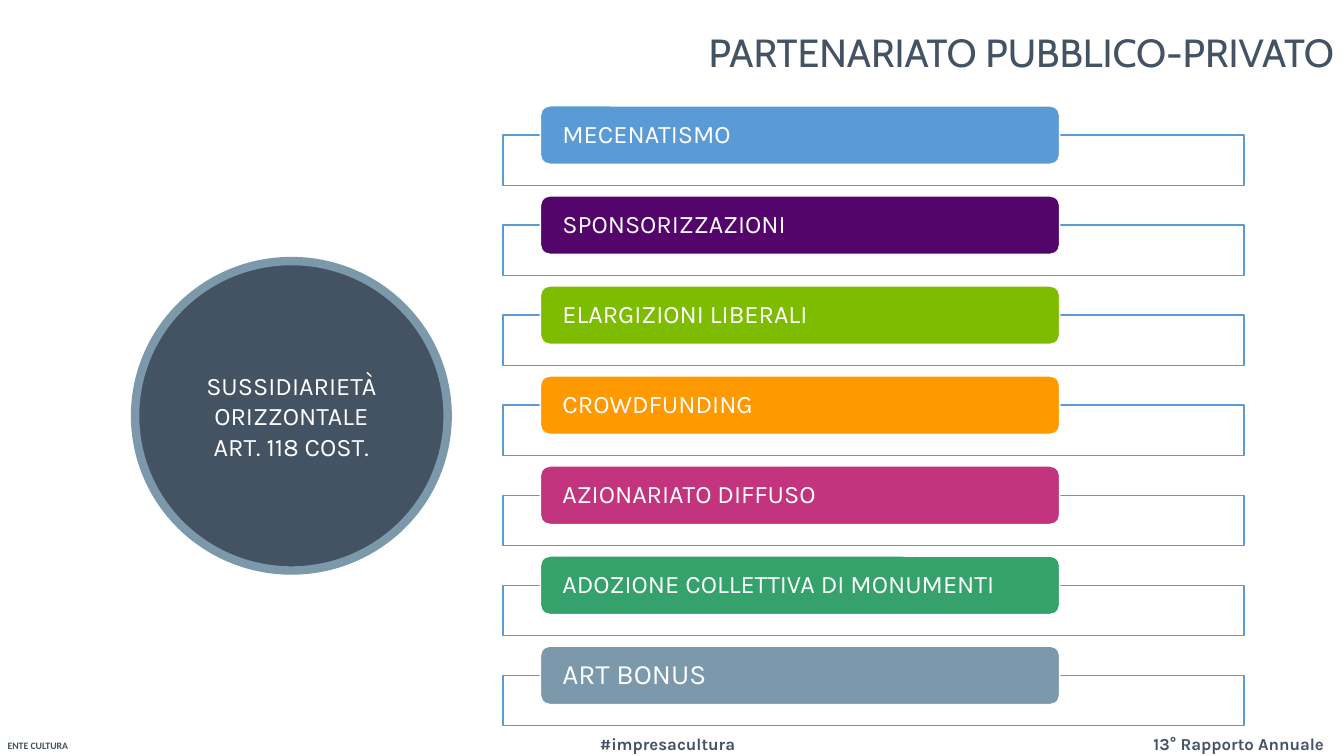
from lxml.etree import SubElement
from pptx import Presentation
from pptx.dml.color import RGBColor
from pptx.enum.shapes import MSO_SHAPE
from pptx.enum.text import MSO_ANCHOR, PP_ALIGN
from pptx.oxml.ns import qn
from pptx.util import Inches, Pt

WHITE = RGBColor(0xFF, 0xFF, 0xFF)
SLATE = RGBColor(0x44, 0x53, 0x64)
STEEL = RGBColor(0x7C, 0x98, 0xAB)
BLUE = RGBColor(0x5B, 0x9B, 0xD5)
PURPLE = RGBColor(0x53, 0x05, 0x6B)
GREEN = RGBColor(0x7D, 0xBC, 0x00)
ORANGE = RGBColor(0xFF, 0x99, 0x00)
PINK = RGBColor(0xC2, 0x34, 0x7E)
EMERALD = RGBColor(0x35, 0xA1, 0x6B)

TITLE = "PARTENARIATO PUBBLICO-PRIVATO"
PRINCIPLE = ["SUSSIDIARIETÀ ORIZZONTALE", "ART. 118 COST."]
TOOLS = [
    ("MECENATISMO", BLUE, 18),
    ("SPONSORIZZAZIONI", PURPLE, 18),
    ("ELARGIZIONI LIBERALI", GREEN, 18),
    ("CROWDFUNDING", ORANGE, 18),
    ("AZIONARIATO DIFFUSO", PINK, 18),
    ("ADOZIONE COLLETTIVA DI MONUMENTI", EMERALD, 18),
    ("ART BONUS", STEEL, 20),
]
FOOTERS = [
    ("ENTE CULTURA", (0, 7.34, 0.75, 0.12), "Calibri", 7, PP_ALIGN.CENTER),
    ("#impresacultura", (5.95, 7.28, 1.43, 0.2), "Karla", 12, PP_ALIGN.LEFT),
    ("13° Rapporto Annuale", (11.44, 7.28, 1.85, 0.2), "Karla", 12, PP_ALIGN.LEFT),
]
FIRST_TOP, LAST_TOP = 1.05, 6.41
PITCH = (LAST_TOP - FIRST_TOP) / (len(TOOLS) - 1)


def set_attrs(obj, values):
    for name, value in values.items():
        setattr(obj, name, value)


def write(tf, lines, font, color, frame=None, para=None):
    set_attrs(tf, {"word_wrap": True, "vertical_anchor": MSO_ANCHOR.MIDDLE, **(frame or {})})
    for i, line in enumerate(lines):
        p = tf.add_paragraph() if i else tf.paragraphs[0]
        set_attrs(p, para or {})
        r = p.add_run()
        r.text = line
        set_attrs(r.font, font)
        r.font.color.rgb = color


def add_box(kind, box, fill, line, width):
    sp = s.shapes.add_shape(kind, *map(Inches, box))
    sp.shadow.inherit = False
    sp.fill.solid()
    sp.fill.fore_color.rgb = fill
    sp.line.color.rgb = line
    sp.line.width = Pt(width)
    return sp


prs = Presentation()
prs.slide_width, prs.slide_height = Inches(13.33), Inches(7.5)
s = prs.slides.add_slide(prs.slide_layouts[5])

title = s.shapes.title
set_attrs(title, dict(zip(("left", "top", "width", "height"), map(Inches, (5.89, 0.16, 7.44, 0.77)))))
write(title.text_frame, [TITLE], {"name": "Cabin", "size": Pt(28)}, SLATE,
      para={"alignment": PP_ALIGN.RIGHT, "line_spacing": 0.9})

for text, box, face, size, align in FOOTERS:
    tb = s.shapes.add_textbox(*map(Inches, box))
    write(tb.text_frame, [text], {"name": face, "size": Pt(size), "bold": True}, SLATE,
          {"word_wrap": False, "margin_left": 0, "margin_right": 0, "margin_top": 0, "margin_bottom": 0},
          {"alignment": align})

for i, (text, color, size) in enumerate(TOOLS):
    top = FIRST_TOP + i * PITCH
    frame = add_box(MSO_SHAPE.RECTANGLE, (4.99, top + 0.29, 7.35, 0.5), WHITE, BLUE, 1)
    fill_color = frame.fill._xPr.find(qn("a:solidFill"))[0]
    SubElement(fill_color, qn("a:alpha"), val="90000")
    label = add_box(MSO_SHAPE.ROUNDED_RECTANGLE, (5.36, top, 5.15, 0.58), color, WHITE, 1)
    write(label.text_frame, [text], {"name": "Karla", "size": Pt(size)}, WHITE,
          {"margin_left": Inches(0.19), "margin_right": Inches(0.19), "margin_top": 0, "margin_bottom": 0},
          {"alignment": PP_ALIGN.LEFT, "line_spacing": 0.9})

circle = add_box(MSO_SHAPE.OVAL, (1.34, 2.59, 3.1, 3.07), SLATE, STEEL, 6)
write(circle.text_frame, PRINCIPLE, {"name": "Karla", "size": Pt(18)}, WHITE,
      para={"alignment": PP_ALIGN.CENTER})

prs.save("out.pptx")
